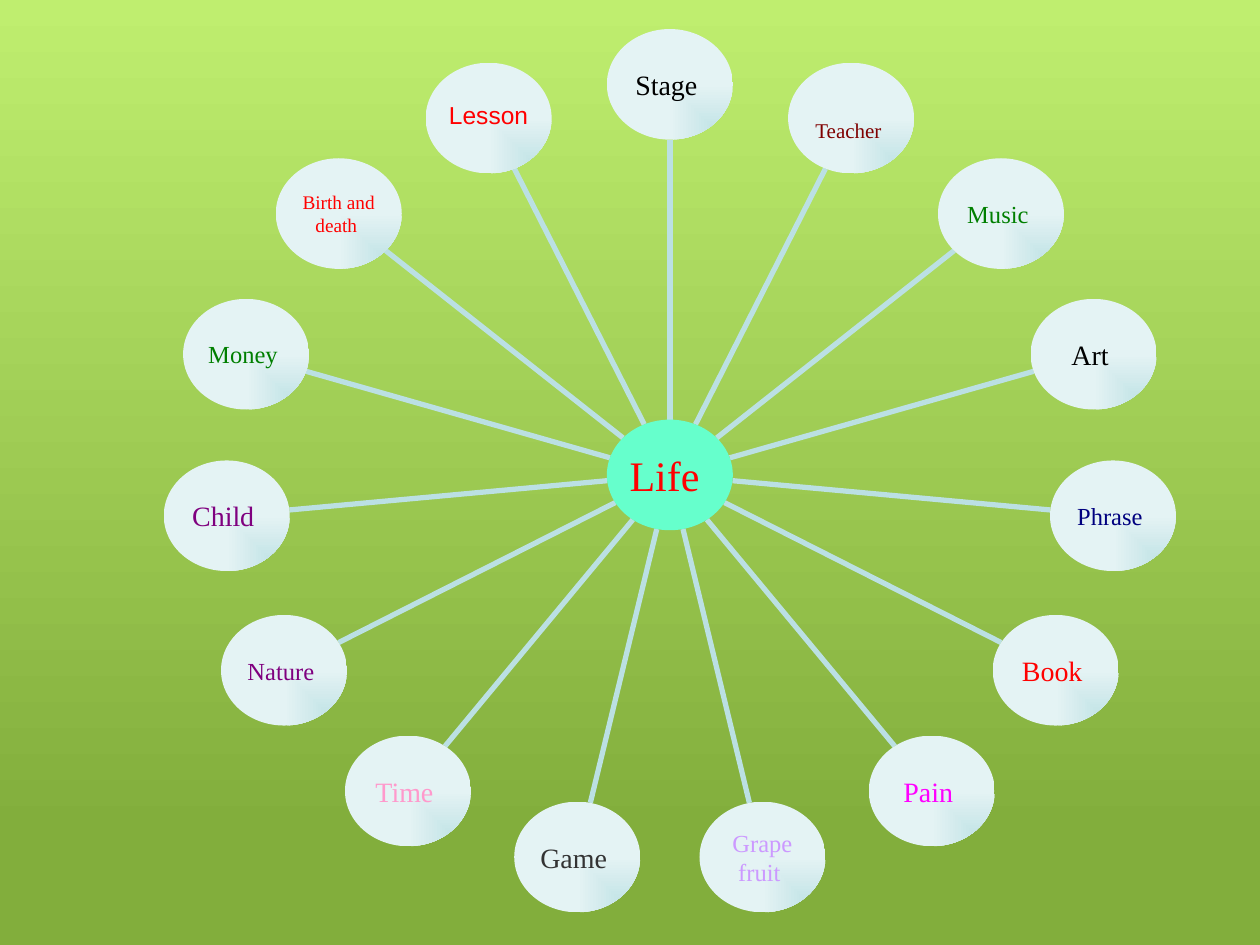
"""Build a radial diagram of fifteen metaphors around the word Life."""
import math

import pptx
import pptx.dml.color
import pptx.enum.shapes
import pptx.enum.text
import pptx.oxml
import pptx.oxml.ns
import pptx.util

Pt = pptx.util.Pt
SERIF, SANS = "Times New Roman", "Arial"
PALE, MIST, AQUA = "E4F3F4", "BBE0E3", "66FFCC"
SKY, GRASS = "BFEE6F", "82AE3C"

HUB = ("Life ", 24, "FF0000")
NODES = [
    ("Stage ", 16, "000000"),
    ("Teacher ", 12, "7F0000"),
    ("Music ", 14, "007F00"),
    ("Art ", 16, "000000"),
    ("Phrase ", 14, "00007F"),
    ("Book ", 16, "FF0000"),
    ("Pain ", 16, "FF00FF"),
    ("Grape\nfruit ", 14, "CC99FF"),
    ("Game ", 16, "333333"),
    ("Time ", 16, "FF99CC"),
    ("Nature ", 14, "7F007F"),
    ("Child ", 16, "7F007F"),
    ("Money ", 14, "007F00"),
    ("Birth and death ", 11, "FF0000"),
    ("Lesson", 14, "FF0000"),
]
FONTS = {"Lesson": SANS}
INSETS = {"Teacher ": (14, 0), "Lesson": (0, 4)}

CX, CY = 382.8, 271.4
ORBIT_X, ORBIT_Y = 254.6, 223.2
NODE_W, NODE_H = 72, 63.2


def rgb(value):
    """Turn a hex string into a colour."""
    return pptx.dml.color.RGBColor.from_string(value)


def set_gradient(fill, stops):
    """Give a fill a two-colour gradient that runs downwards."""
    fill.gradient()
    fill.gradient_angle = 270
    for stop, (position, color) in zip(fill.gradient_stops, stops):
        stop.position = position
        stop.color.rgb = rgb(color)


def set_corner_gradient(sp):
    """Shade an ellipse from its lower right corner."""
    set_gradient(sp.fill, [(0, MIST), (1, PALE)])
    lin = sp._element.spPr.find(".//" + pptx.oxml.ns.qn("a:lin"))
    corner = pptx.oxml.parse_xml(
        f'<a:path {pptx.oxml.ns.nsdecls("a")} path="rect">'
        '<a:fillToRect l="100000" t="100000"/></a:path>')
    lin.getparent().replace(lin, corner)


def add_node(shapes, x, y, text, size, color):
    """Add a labelled ellipse centred on a point."""
    sp = shapes.add_shape(pptx.enum.shapes.MSO_SHAPE.OVAL,
                          Pt(x - NODE_W / 2), Pt(y - NODE_H / 2), Pt(NODE_W), Pt(NODE_H))
    sp.shadow.inherit = False
    sp.line.fill.background()
    top, bottom = INSETS.get(text, (0, 0))
    tf = sp.text_frame
    tf.margin_left = tf.margin_right = 0
    tf.margin_top, tf.margin_bottom = Pt(top), Pt(bottom)
    tf.vertical_anchor = pptx.enum.text.MSO_ANCHOR.MIDDLE
    tf.word_wrap = True
    tf.text = text
    for p in tf.paragraphs:
        p.alignment = pptx.enum.text.PP_ALIGN.CENTER
        p.font.name = FONTS.get(text, SERIF)
        p.font.size = Pt(size)
        p.font.color.rgb = rgb(color)
    return sp


def add_spoke(shapes, x1, y1, x2, y2):
    """Add a plain line between two points."""
    line = shapes.add_connector(pptx.enum.shapes.MSO_CONNECTOR.STRAIGHT,
                                Pt(x1), Pt(y1), Pt(x2), Pt(y2))
    line.line.color.rgb = rgb(MIST)
    line.line.width = Pt(3)
    line._element.spPr.append(
        pptx.oxml.parse_xml(f'<a:effectLst {pptx.oxml.ns.nsdecls("a")}/>'))


def main():
    """Lay the nodes out evenly around the hub and save the deck."""
    prs = pptx.Presentation()
    prs.slide_width, prs.slide_height = Pt(720), Pt(540)
    s = prs.slides.add_slide(prs.slide_layouts[6])
    set_gradient(s.background.fill, [(0, SKY), (0.88, GRASS)])
    shapes = s.shapes.add_group_shape().shapes

    for i, node in enumerate(NODES):
        angle = 2 * math.pi * i / len(NODES)
        ux, uy = math.sin(angle), -math.cos(angle)
        x, y = CX + ORBIT_X * ux, CY + ORBIT_Y * uy
        dx, dy = NODE_W / 2 * ux, NODE_H / 2 * uy
        add_spoke(shapes, CX + dx, CY + dy, x - dx, y - dy)
        set_corner_gradient(add_node(shapes, x, y, *node))

    hub = add_node(shapes, CX, CY, *HUB)
    hub.fill.solid()
    hub.fill.fore_color.rgb = rgb(AQUA)
    prs.save("out.pptx")


if __name__ == "__main__":
    main()
